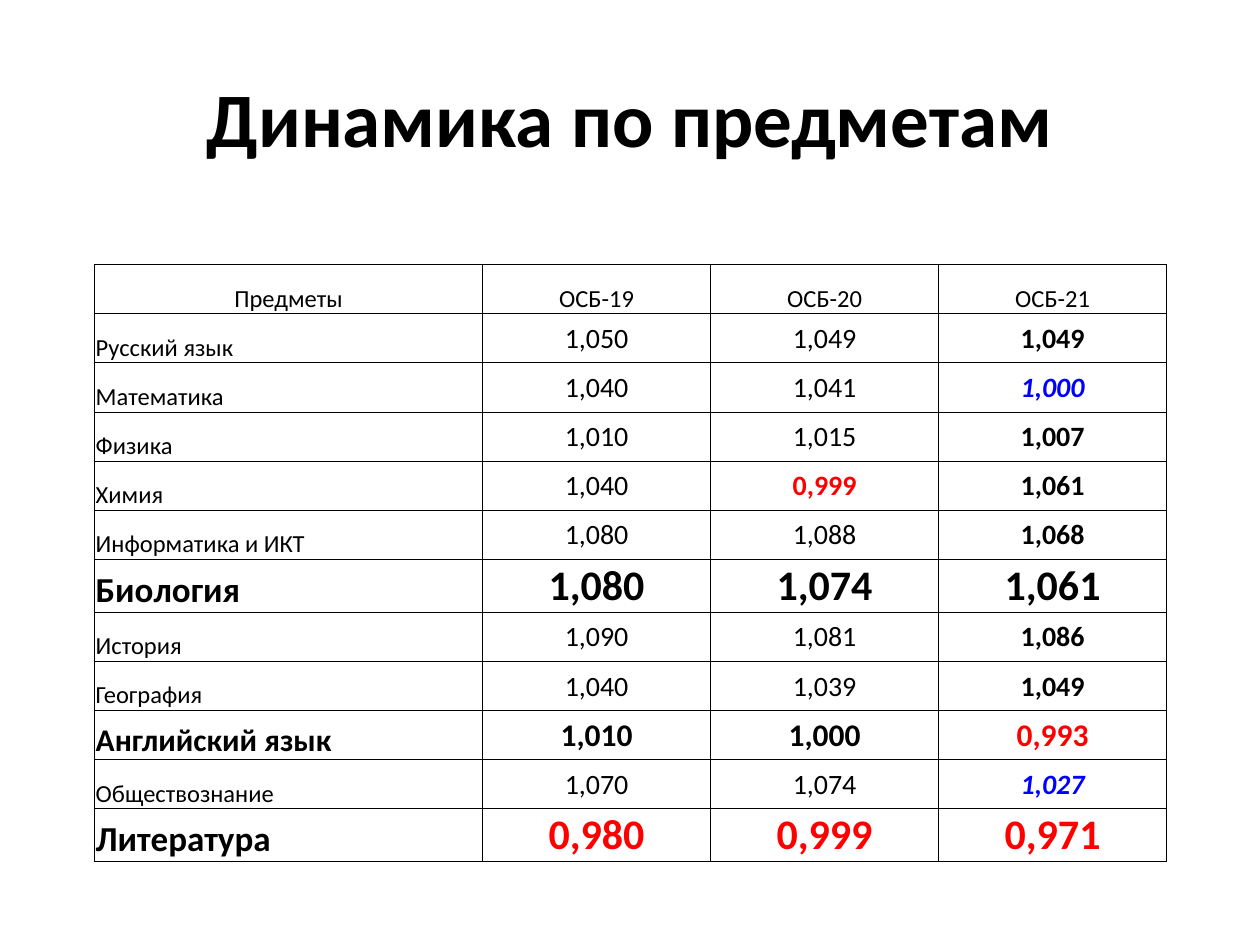
import pptx
import pptx.dml.color
import pptx.enum.text
import pptx.oxml
import pptx.oxml.ns
import pptx.util
from pptx.util import Inches

RGBColor = pptx.dml.color.RGBColor
Align = pptx.enum.text.PP_ALIGN
Anchor = pptx.enum.text.MSO_ANCHOR

BLACK = RGBColor(0x00, 0x00, 0x00)
RED = RGBColor(0xFF, 0x00, 0x00)
BLUE = RGBColor(0x00, 0x00, 0xFF)
FONT = "Calibri"

HEADINGS = ["Предметы", "ОСБ-19", "ОСБ-20", "ОСБ-21"]
RESULTS = [
    ["Русский язык", "1,050", "1,049", "1,049"],
    ["Математика", "1,040", "1,041", "1,000"],
    ["Физика", "1,010", "1,015", "1,007"],
    ["Химия", "1,040", "0,999", "1,061"],
    ["Информатика и ИКТ", "1,080", "1,088", "1,068"],
    ["Биология", "1,080", "1,074", "1,061"],
    ["История", "1,090", "1,081", "1,086"],
    ["География", "1,040", "1,039", "1,049"],
    ["Английский язык", "1,010", "1,000", "0,993"],
    ["Обществознание", "1,070", "1,074", "1,027"],
    ["Литература", "0,980", "0,999", "0,971"],
]
# Highlighted subjects: size of the subject name, size of its values
HIGHLIGHTS = {"Биология": (20, 24), "Английский язык": (18, 18), "Литература": (20, 24)}
# Subjects whose latest value dropped sharply
DROPPED = {"Математика", "Обществознание"}

SUBJECT_WIDTH = 3.08
YEAR_WIDTH = 1.81
ROW_HEIGHT = 0.39
TALL_ROW_HEIGHT = 0.42


def write_text(frame, text, size=14, color=BLACK, bold=False, italic=False,
               align=Align.CENTER):
    paragraph = frame.paragraphs[0]
    paragraph.alignment = align
    run = paragraph.add_run()
    run.text = text
    font = run.font
    font.name = FONT
    font.size = pptx.util.Pt(size)
    font.color.rgb = color
    font.bold = bold
    font.italic = italic


def set_borders(cell, widths):
    """Draw black borders; widths are points for left, right, top, bottom."""
    properties = cell._tc.get_or_add_tcPr()
    for index, (side, width) in enumerate(zip("LRTB", widths)):
        border = pptx.oxml.parse_xml(
            f'<a:ln{side} {pptx.oxml.ns.nsdecls("a")} w="{pptx.util.Pt(width)}">'
            f'<a:solidFill><a:srgbClr val="{BLACK}"/></a:solidFill>'
            f'<a:prstDash val="solid"/></a:ln{side}>')
        properties.insert(index, border)


def format_for(row, column):
    """Text format of a result, by its subject, year and value."""
    subject, value = row[0], row[column]
    subject_size, value_size = HIGHLIGHTS.get(subject, (14, 16))
    highlighted = subject in HIGHLIGHTS
    if column == 0:
        return dict(size=subject_size, bold=highlighted, align=Align.LEFT)
    latest = column == len(row) - 1
    dropped = latest and subject in DROPPED
    below_one = value.startswith("0")
    color = RED if below_one else BLUE if dropped else BLACK
    return dict(size=value_size, color=color, italic=dropped,
                bold=highlighted or latest or below_one)


def add_title(slide, text, left, top, width, height):
    title = slide.shapes.title
    title.left, title.top, title.width, title.height = left, top, width, height
    title.text_frame.vertical_anchor = Anchor.MIDDLE
    write_text(title.text_frame, text, size=44, bold=True)


def add_results_table(slide, left, top, width, height):
    rows = [HEADINGS] + RESULTS
    last_row, last_column = len(rows) - 1, len(HEADINGS) - 1
    table = slide.shapes.add_table(len(rows), len(HEADINGS), left, top, width, height).table
    table.first_row = table.horz_banding = False

    for c, column in enumerate(table.columns):
        column.width = Inches(YEAR_WIDTH if c else SUBJECT_WIDTH)
    for r, row in enumerate(rows):
        tall = HIGHLIGHTS.get(row[0], (14, 16))[1] > 18
        table.rows[r].height = Inches(TALL_ROW_HEIGHT if tall else ROW_HEIGHT)
        for c, text in enumerate(row):
            cell = table.cell(r, c)
            cell.fill.background()
            cell.margin_left = cell.margin_right = cell.margin_top = Inches(0.01)
            cell.margin_bottom = 0
            cell.vertical_anchor = Anchor.MIDDLE if r and c else Anchor.BOTTOM
            write_text(cell.text_frame, text, **(format_for(row, c) if r else {}))
            outer_sides = (c == 0, c == last_column, r == 0, r == last_row)
            set_borders(cell, [1 if outer else 0.5 for outer in outer_sides])


def main():
    presentation = pptx.Presentation()
    presentation.slide_width = Inches(10)
    presentation.slide_height = Inches(7.5)
    slide = presentation.slides.add_slide(presentation.slide_layouts.get_by_name("Title Only"))
    add_title(slide, "Динамика по предметам",
              Inches(0.5), Inches(0.3), Inches(9), Inches(1.25))
    add_results_table(slide, Inches(0.75), Inches(2.1), Inches(8.5), Inches(4.75))
    presentation.save("out.pptx")


if __name__ == "__main__":
    main()
